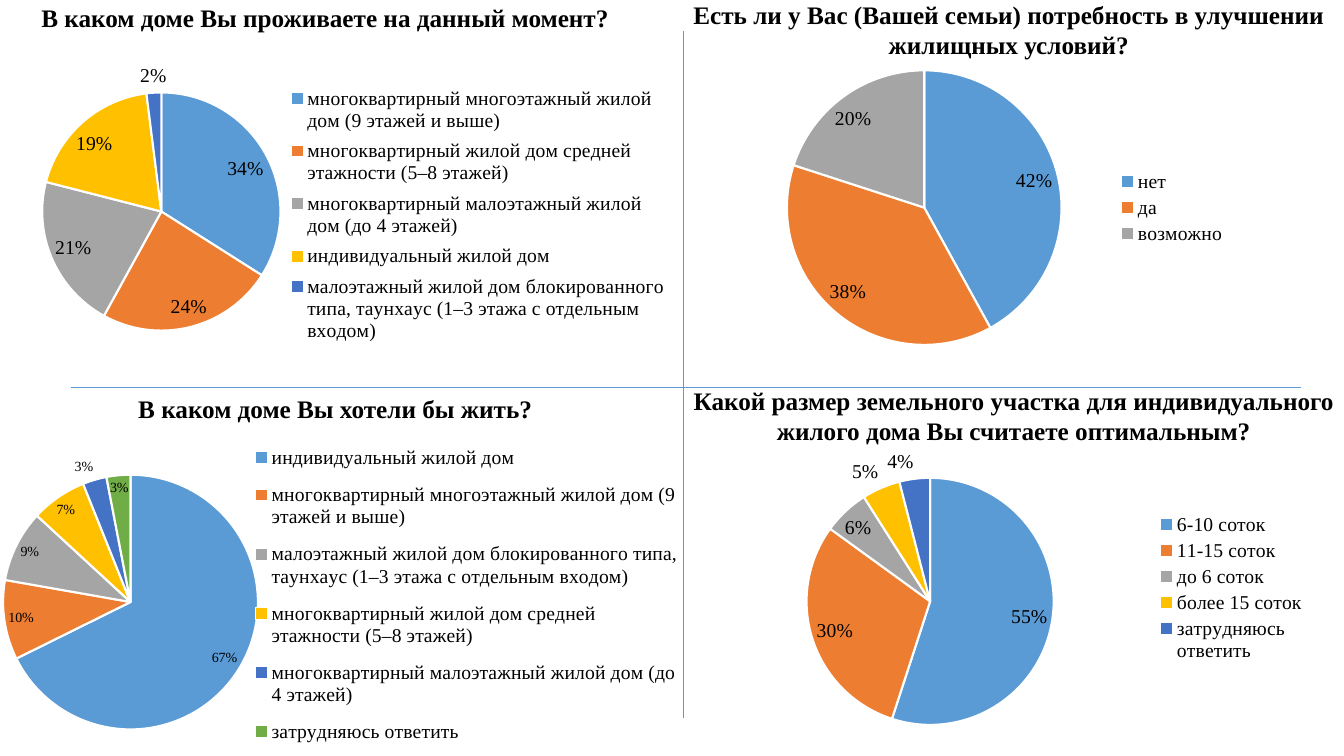
from lxml import etree
from pptx import Presentation
from pptx import util as u
from pptx.chart.data import CategoryChartData
from pptx.dml.color import RGBColor
from pptx.enum import chart as ch, shapes, text
from pptx.oxml import parse_xml
from pptx.oxml.ns import nsdecls, qn

PX = 9144  # 100 px to the inch
FONT = "Times New Roman"
BLUE = "5B9BD5"
COLORS = [BLUE, "ED7D31", "A5A5A5", "FFC000", "4472C4", "70AD47"]


def style(font, size, color="000000", bold=False):
    font.name = FONT
    font.size = u.Pt(size)
    font.bold = bold
    font.color.rgb = RGBColor.from_string(color)


def layout(box, inner=False):
    """Manual chart layout from left, top, width and height as shares of the chart."""
    target = '<c:layoutTarget val="inner"/>' if inner else ""
    modes = '<c:xMode val="edge"/><c:yMode val="edge"/>'
    sides = "".join(f'<c:{side} val="{share}"/>' for side, share in zip("xywh", box))
    return parse_xml(f'<c:layout {nsdecls("c")}><c:manualLayout>{target}{modes}{sides}'
                     "</c:manualLayout></c:layout>")


HIGH = "многоквартирный многоэтажный жилой дом (9 этажей и выше)"
MID = "многоквартирный жилой дом средней этажности (5–8 этажей)"
LOW = "многоквартирный малоэтажный жилой дом (до 4 этажей)"
HOUSE = "индивидуальный жилой дом"
TOWN = "малоэтажный жилой дом блокированного типа, таунхаус (1–3 этажа с отдельным входом)"
UNSURE = "затрудняюсь ответить"

# chart box, label size, answers, plot share, legend share
pies = [
    ((-18, 403, 702, 360), 10,
     {HOUSE: 67, HIGH: 10, TOWN: 9, MID: 7, LOW: 3, UNSURE: 3},
     (0.03, 0.15, 0.36, 0.78), (0.38, 0.07, 0.61, 0.9)),
    ((-44, 60, 716, 306), 14,
     {HIGH: 34, MID: 24, LOW: 21, HOUSE: 19, TOWN: 2},
     (0.12, 0.1, 0.33, 0.78), (0.47, 0.06, 0.52, 0.88)),
    ((727, 56, 500, 300), 14, {"нет": 42, "да": 38, "возможно": 20}, None, None),
    ((689, 433, 617, 300), 14,
     {"6-10 соток": 55, "11-15 соток": 30, "до 6 соток": 6, "более 15 соток": 5, UNSURE: 4},
     None, None),
]
heads = [
    ((-11, -3, 667, 40), "В каком доме Вы проживаете на данный момент?"),
    ((667, -6, 667, 71), "Есть ли у Вас (Вашей семьи) потребность в улучшении жилищных условий?"),
    ((-1, 385, 667, 40), "В каком доме Вы хотели бы жить?"),
    ((672, 377, 667, 71),
     "Какой размер земельного участка для индивидуального жилого дома Вы считаете оптимальным?"),
]
rules = [(678, 31, 678, 712), (70, 384, 1290, 384)]

prs = Presentation()
prs.slide_width, prs.slide_height = 1333 * PX, 750 * PX
slide = prs.slides.add_slide(prs.slide_layouts[6])

for box, size, answers, plot_box, key_box in pies:
    data = CategoryChartData()
    data.categories = list(answers)
    data.add_series("Ответы", list(answers.values()))
    chart = slide.shapes.add_chart(ch.XL_CHART_TYPE.PIE, *[n * PX for n in box], data).chart
    chart.has_title = False
    style(chart.font, 10)
    chart.has_legend = True
    key = chart.legend
    key.position = ch.XL_LEGEND_POSITION.RIGHT
    key.include_in_layout = False
    style(key.font, 14)

    plot = chart.plots[0]
    plot.vary_by_categories = True
    for i in range(len(answers)):
        slice_ = plot.series[0].points[i].format
        slice_.fill.solid()
        slice_.fill.fore_color.rgb = RGBColor.from_string(COLORS[i])
        slice_.line.color.rgb = RGBColor.from_string("FFFFFF")
        slice_.line.width = u.Pt(1.5)

    labels = plot.series[0].data_labels
    whole = sum(answers.values()) == 100
    labels.show_percentage = whole
    labels.show_value = not whole
    labels.number_format = "0%" if whole else '0"%"'
    labels.number_format_is_linked = False
    labels.position = ch.XL_LABEL_POSITION.BEST_FIT
    style(labels.font, size)

    if plot_box:
        area = chart.element.find(".//" + qn("c:plotArea"))
        for old in area.findall(qn("c:layout")):
            area.remove(old)
        area.insert(0, layout(plot_box, inner=True))
        legend = chart.element.find(".//" + qn("c:legend"))
        for old in legend.findall(qn("c:layout")):
            legend.remove(old)
        legend.find(qn("c:legendPos")).addnext(layout(key_box))

for box, title in heads:
    frame = slide.shapes.add_textbox(*[n * PX for n in box]).text_frame
    frame.word_wrap = True
    frame.auto_size = text.MSO_AUTO_SIZE.SHAPE_TO_FIT_TEXT
    frame.text = title
    par = frame.paragraphs[0]
    par.alignment = text.PP_ALIGN.CENTER
    style(par.runs[0].font, 18, bold=True)

for ends in rules:
    rule = slide.shapes.add_connector(shapes.MSO_CONNECTOR.STRAIGHT, *[n * PX for n in ends])
    rule.line.color.rgb = RGBColor.from_string(BLUE)
    rule.line.width = u.Pt(0.5)
    etree.SubElement(rule.element.spPr, qn("a:effectLst"))

prs.save("out.pptx")
